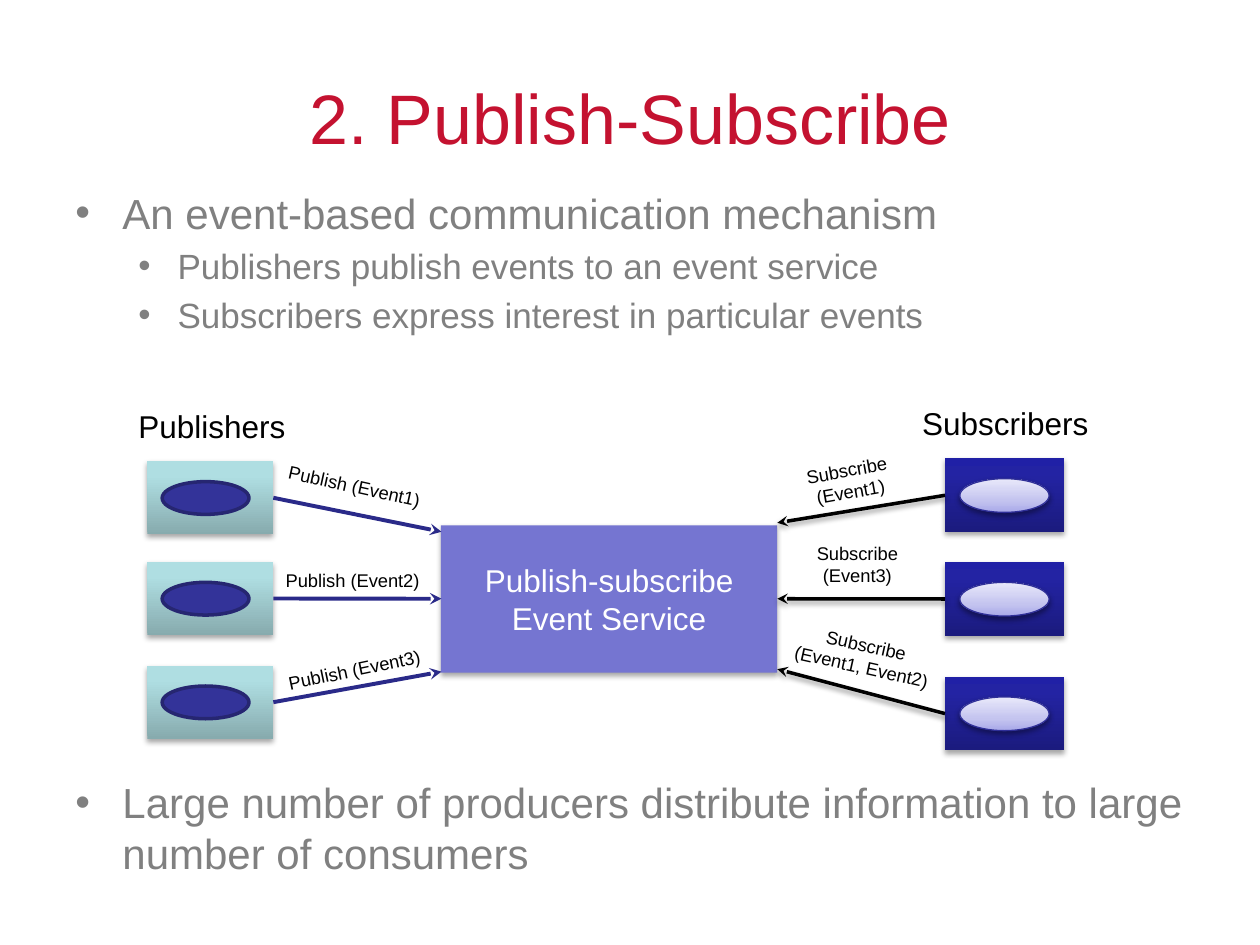
"""Build the Publish-Subscribe slide: bullets around an event service diagram."""

from dataclasses import dataclass
from typing import NamedTuple, Optional

from lxml.etree import SubElement
from pptx import Presentation
from pptx.dml.color import RGBColor
from pptx.enum.shapes import MSO_CONNECTOR as Connector, MSO_SHAPE as Preset
from pptx.enum.text import MSO_ANCHOR as Anchor, PP_ALIGN as Align
from pptx.oxml.ns import qn
from pptx.util import Cm, Pt


class Stop(NamedTuple):
    position: int
    color: str


class Box(NamedTuple):
    left: float
    top: float
    width: float
    height: float


class Bullet(NamedTuple):
    text: str
    size: float
    margin: float
    hanging: float
    space_before: float


class Label(NamedTuple):
    text: str
    box: Box
    rotation: float = 0


class Link(NamedTuple):
    node_top: float
    target_y: float
    label: Label


@dataclass(frozen=True)
class Theme:
    font: str = "Arial"
    title: str = "C41230"
    body: str = "808080"
    text: str = "000000"
    hub: str = "7575D1"
    hub_text: str = "FFFFFF"
    title_size: float = 40
    bullet_size: float = 24
    sub_bullet_size: float = 20
    diagram_size: float = 18
    label_size: float = 10.5


@dataclass(frozen=True)
class Role:
    heading: Label
    node_left: float
    node_width: float
    node_height: float
    node_fill: tuple
    oval: Box
    oval_fill: tuple
    oval_line: str
    oval_line_width: float
    oval_shadow: int
    arrow_start: float
    arrow_end: float
    arrow_color: str
    arrow_width: float
    arrow_shadow: int
    label_align: Align
    links: tuple


THEME = Theme()
HUB = Box(8.89, 10.59, 6.78, 2.97)
BULLETS = (
    Bullet("An event-based communication mechanism", THEME.bullet_size, 0.95, 0.95, 0),
    Bullet("Publishers publish events to an event service", THEME.sub_bullet_size, 2.06, 0.79, 4),
    Bullet("Subscribers express interest in particular events", THEME.sub_bullet_size, 2.06, 0.79, 4),
    Bullet("Large number of producers distribute information to large number of consumers",
           THEME.bullet_size, 0.95, 0.95, 252),
)
PUBLISHER = Role(
    heading=Label("Publishers", Box(2.54, 8.08, 3.81, 1.02)),
    node_left=2.97, node_width=2.54, node_height=1.47,
    node_fill=(Stop(0, "87ABAE"), Stop(80, "AFDEE2"), Stop(100, "AFE0E4")),
    oval=Box(0.3, 0.41, 1.75, 0.66), oval_fill=(Stop(0, "333399"),),
    oval_line="262671", oval_line_width=2, oval_shadow=0,
    arrow_start=5.51, arrow_end=8.9, arrow_color="2A2A89", arrow_width=2.25, arrow_shadow=0,
    label_align=Align.LEFT,
    links=(
        Link(9.3, 10.72, Label("Publish (Event1)", Box(5.54, 9.47, 3.4, 0.71), 12.6)),
        Link(11.33, 12.07, Label("Publish (Event2)", Box(5.51, 11.35, 3.4, 0.71))),
        Link(13.42, 13.54, Label("Publish (Event3)", Box(5.54, 13.13, 3.4, 0.71), 348.2)),
    ),
)
SUBSCRIBER = Role(
    heading=Label("Subscribers", Box(18.34, 8.03, 4.09, 1.02)),
    node_left=19.05, node_width=2.41, node_height=1.49,
    node_fill=(Stop(0, "1B1B7E"), Stop(80, "2323A3"), Stop(100, "2020A6")),
    oval=Box(0.3, 0.41, 1.8, 0.68),
    oval_fill=(Stop(0, "A9A9E9"), Stop(35, "C4C4EF"), Stop(100, "E8E8FA")),
    oval_line="2F2F98", oval_line_width=0.75, oval_shadow=38,
    arrow_start=19.05, arrow_end=15.67, arrow_color="000000", arrow_width=2, arrow_shadow=38,
    label_align=Align.CENTER,
    links=(
        Link(9.24, 10.54, Label("Subscribe (Event1)", Box(15.34, 9.12, 3.53, 1.14), 349.7)),
        Link(11.33, 12.07, Label("Subscribe (Event3)", Box(15.52, 10.8, 3.53, 1.14))),
        Link(13.64, 13.49, Label("Subscribe (Event1, Event2)", Box(15.65, 12.65, 3.53, 1.14), 12.6)),
    ),
)


def add_shadow(effects, opacity: int) -> None:
    """Add a soft downward shadow to an effect list."""
    shadow = SubElement(effects, qn("a:outerShdw"), blurRad="40000", dist="23000",
                        dir="5400000", rotWithShape="0")
    color = SubElement(shadow, qn("a:srgbClr"), val="000000")
    SubElement(color, qn("a:alpha"), val=str(opacity * 1000))


def style_text(paragraph, size: float, color: str, align: Align = Align.LEFT) -> None:
    """Apply the theme font to a paragraph's runs."""
    paragraph.alignment = align
    for run in paragraph.runs:
        run.font.name = THEME.font
        run.font.size = Pt(size)
        run.font.color.rgb = RGBColor.from_string(color)


def add_text(slide, label: Label, size: float, color: str, align: Align = Align.LEFT,
             anchor: Anchor = Anchor.TOP) -> None:
    """Add a wrapped, optionally rotated text box."""
    shape = slide.shapes.add_textbox(*map(Cm, label.box))
    shape.rotation = label.rotation
    frame = shape.text_frame
    frame.word_wrap = True
    frame.vertical_anchor = anchor
    frame.text = label.text
    style_text(frame.paragraphs[0], size, color, align)


def add_bullets(slide, box: Box, bullets: tuple) -> None:
    """Add the bulleted body text."""
    frame = slide.shapes.add_textbox(*map(Cm, box)).text_frame
    frame.word_wrap = True
    for index, bullet in enumerate(bullets):
        paragraph = frame.add_paragraph() if index else frame.paragraphs[0]
        paragraph.text = bullet.text
        properties = paragraph._p.get_or_add_pPr()
        properties.set("marL", str(Cm(bullet.margin)))
        properties.set("indent", str(-Cm(bullet.hanging)))
        paragraph.space_before = Pt(bullet.space_before)
        SubElement(properties, qn("a:buFont"), typeface=THEME.font)
        SubElement(properties, qn("a:buChar"), char="•")
        style_text(paragraph, bullet.size, THEME.body)


def add_block(shapes, preset: Preset, box: Box, stops: tuple, shadow: int = 0,
              line: Optional[str] = None, line_width: float = 0):
    """Add a preset shape with a solid or upward gradient fill."""
    shape = shapes.add_shape(preset, *map(Cm, box))
    if len(stops) == 1:
        shape.fill.solid()
        shape.fill.fore_color.rgb = RGBColor.from_string(stops[0].color)
    else:
        shape.fill.gradient()
        shape.fill.gradient_angle = 90
        stop_list = shape._element.spPr.find(".//" + qn("a:gsLst"))
        stop_list.clear()
        for stop in stops:
            entry = SubElement(stop_list, qn("a:gs"), pos=str(stop.position * 1000))
            SubElement(entry, qn("a:srgbClr"), val=stop.color)
    if line:
        shape.line.color.rgb = RGBColor.from_string(line)
        shape.line.width = Pt(line_width)
    else:
        shape.line.fill.background()
    shape.shadow.inherit = False
    if shadow:
        add_shadow(shape._element.spPr.find(qn("a:effectLst")), shadow)
    return shape


def add_arrow(slide, role: Role, start_y: float, end_y: float) -> None:
    """Add a stealth-headed arrow from a node to the event service."""
    arrow = slide.shapes.add_connector(Connector.STRAIGHT, Cm(role.arrow_start), Cm(start_y),
                                       Cm(role.arrow_end), Cm(end_y))
    arrow.line.color.rgb = RGBColor.from_string(role.arrow_color)
    arrow.line.width = Pt(role.arrow_width)
    SubElement(arrow.line._get_or_add_ln(), qn("a:tailEnd"), type="stealth")
    effects = SubElement(arrow._element.spPr, qn("a:effectLst"))
    if role.arrow_shadow:
        add_shadow(effects, role.arrow_shadow)


def add_role(slide, role: Role) -> None:
    """Draw one side of the diagram: heading, nodes, arrows and labels."""
    for link in role.links:
        shapes = slide.shapes.add_group_shape().shapes
        node = Box(role.node_left, link.node_top, role.node_width, role.node_height)
        oval = role.oval._replace(left=node.left + role.oval.left, top=node.top + role.oval.top)
        add_block(shapes, Preset.RECTANGLE, node, role.node_fill, 35)
        add_block(shapes, Preset.OVAL, oval, role.oval_fill, role.oval_shadow,
                  role.oval_line, role.oval_line_width)
        add_arrow(slide, role, node.top + node.height / 2, link.target_y)
        add_text(slide, link.label, THEME.label_size, THEME.text, role.label_align)
    add_text(slide, role.heading, THEME.diagram_size, THEME.text)


def main() -> None:
    """Build and save the presentation."""
    presentation = Presentation()
    presentation.slide_width, presentation.slide_height = Cm(25.4), Cm(19.05)
    slide = presentation.slides.add_slide(presentation.slide_layouts[6])
    add_text(slide, Label("2. Publish-Subscribe", Box(1.27, 0.76, 22.86, 3.18)),
             THEME.title_size, THEME.title, Align.CENTER, Anchor.MIDDLE)
    add_bullets(slide, Box(1.27, 3.65, 23.5, 13.97), BULLETS)
    hub = add_block(slide.shapes, Preset.RECTANGLE, HUB, (Stop(0, THEME.hub),), 35)
    hub.text_frame.text = "Publish-subscribe Event Service"
    style_text(hub.text_frame.paragraphs[0], THEME.diagram_size, THEME.hub_text, Align.CENTER)
    for role in (PUBLISHER, SUBSCRIBER):
        add_role(slide, role)
    presentation.save("out.pptx")


if __name__ == "__main__":
    main()
